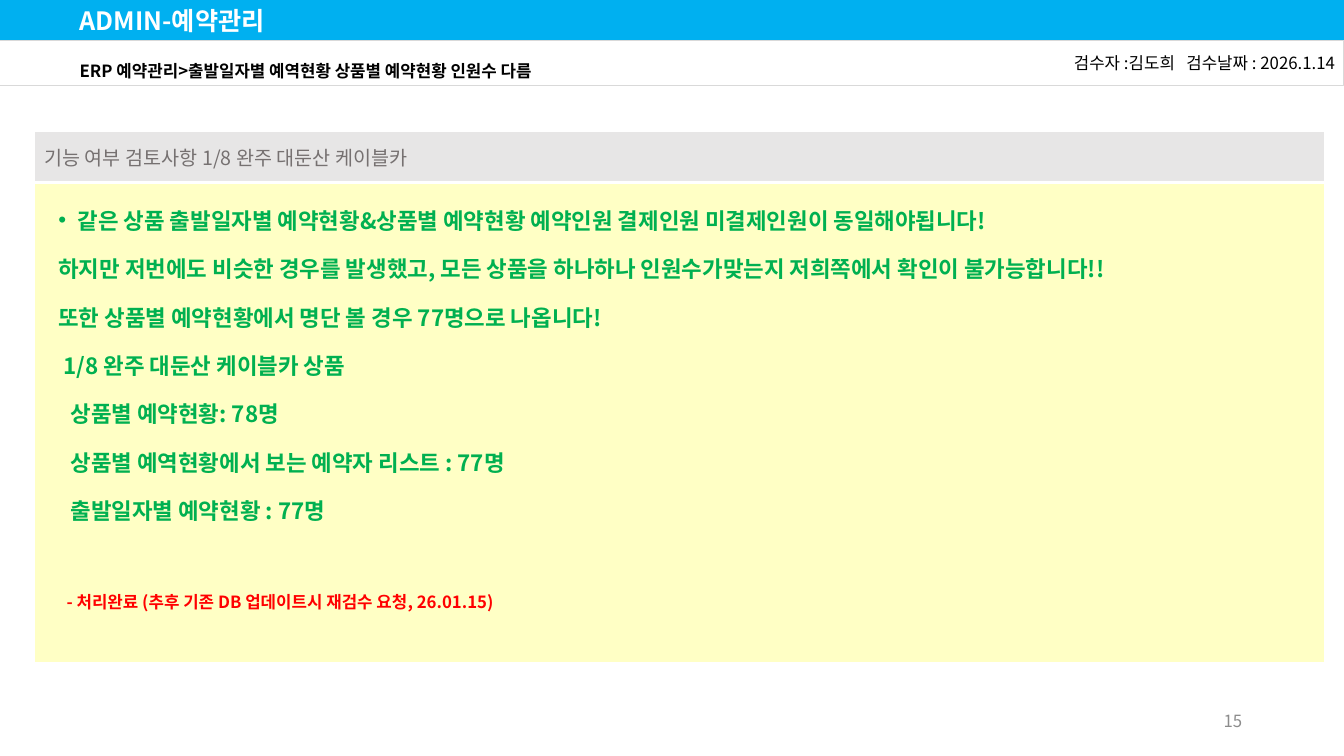
from lxml import etree
from pptx import Presentation
from pptx.dml.color import RGBColor
from pptx.enum.shapes import MSO_SHAPE
from pptx.enum.text import MSO_ANCHOR, MSO_AUTO_SIZE, PP_ALIGN
from pptx.oxml.ns import qn
from pptx.util import Inches, Pt

RECTANGLE = MSO_SHAPE.RECTANGLE
TOP, MIDDLE = MSO_ANCHOR.TOP, MSO_ANCHOR.MIDDLE
LEFT, RIGHT = PP_ALIGN.LEFT, PP_ALIGN.RIGHT
NO_AUTOFIT = MSO_AUTO_SIZE.NONE
TITLE_ONLY = 5
FONT = "Noto Sans CJK KR"
COLORS = {
    "bar": "00B0F0", "white": "FFFFFF", "black": "000000", "outline": "D9D9D9",
    "number": "8C8C8C", "heading": "767171", "heading_fill": "E7E6E6",
    "review": "00B050", "review_fill": "FFFFC5", "done": "FF0000",
}
REVIEW_LINES = [
    ("같은 상품 출발일자별 예약현황&상품별 예약현황 예약인원 결제인원 미결제인원이 동일해야됩니다!", 0),
    ("하지만 저번에도 비슷한 경우를 발생했고, 모든 상품을 하나하나 인원수가맞는지 저희쪽에서 확인이 불가능합니다!!", 0),
    ("또한 상품별 예약현황에서 명단 볼 경우 77명으로 나옵니다!", 0),
    ("1/8 완주 대둔산 케이블카 상품", 0.05),
    ("상품별 예약현황: 78명", 0.12),
    ("상품별 예역현황에서 보는 예약자 리스트 : 77명", 0.12),
    ("출발일자별 예약현황 : 77명", 0.12),
]
DONE_NOTE = "- 처리완료 (추후 기존 DB 업데이트시 재검수 요청, 26.01.15)"


def color(name):
    """Return the named palette colour."""
    return RGBColor.from_string(COLORS[name])


def add_run(paragraph, text, size, ink, bold=False):
    """Add one formatted run to a paragraph and return it."""
    run = paragraph.add_run()
    run.text = text
    run.font.size = Pt(size)
    run.font.bold = bold
    run.font.name = FONT
    run.font.color.rgb = color(ink)
    etree.SubElement(run.font._element, qn("a:ea"), typeface=FONT)
    return run


def set_frame(frame, left=0.1, top=0.05, anchor=MIDDLE):
    """Set wrapping, insets and anchor of a text frame."""
    frame.word_wrap = True
    frame.auto_size = NO_AUTOFIT
    frame.margin_left, frame.margin_top = Inches(left), Inches(top)
    frame.margin_right, frame.margin_bottom = Inches(0.1), Inches(0.05)
    frame.vertical_anchor = anchor


def place(shape, box):
    """Move and size a shape to a box in inches."""
    shape.left, shape.top, shape.width, shape.height = map(Inches, box)


def add_title(slide, box):
    """Turn the title placeholder into the blue bar."""
    title = slide.shapes.title
    place(title, box)
    title.fill.solid()
    title.fill.fore_color.rgb = color("bar")
    set_frame(title.text_frame, left=0.79)
    heading = title.text_frame.paragraphs[0]
    heading.alignment = LEFT
    add_run(heading, "ADMIN-예약관리", 18, "white", True)


def add_menu_path(slide, box):
    """Add the outlined strip with the menu path and issue."""
    strip = slide.shapes.add_shape(RECTANGLE, *map(Inches, box))
    strip.shadow.inherit = False
    strip.fill.background()
    strip.line.color.rgb = color("outline")
    strip.line.width = Pt(0.75)
    set_frame(strip.text_frame, left=0.79, top=0.2)
    issue = strip.text_frame.paragraphs[0]
    issue.alignment = LEFT
    add_run(issue, "ERP 예약관리>출발일자별 예역현황 상품별 예약현황 인원수 다름", 12, "black", True)


def add_right_text(slide, box, anchor):
    """Add a right-aligned text box and return its paragraph."""
    frame = slide.shapes.add_textbox(*map(Inches, box)).text_frame
    set_frame(frame, anchor=anchor)
    paragraph = frame.paragraphs[0]
    paragraph.alignment = RIGHT
    return paragraph


def add_inspection(slide, box):
    """Add the inspector and the inspection date."""
    inspection = add_right_text(slide, box, TOP)
    add_run(inspection, "검수자 :김도희", 12, "black")
    gap = add_run(inspection, " ", 12, "black")
    gap.font._element.set("spc", "540")
    add_run(inspection, "검수날짜 : 2026.1.14", 12, "black")


def add_page_number(slide, box):
    """Add the page number."""
    add_run(add_right_text(slide, box, MIDDLE), "15", 12, "number")


def style_cell(cell, fill, left, top, bottom_width=1):
    """Set fill, margins and white borders of a table cell."""
    cell.fill.solid()
    cell.fill.fore_color.rgb = color(fill)
    cell.margin_left, cell.margin_top = Inches(left), Inches(top)
    properties = cell._tc.get_or_add_tcPr()
    for index, side in enumerate("LRTB"):
        width = bottom_width if side == "B" else 1
        border = etree.Element(qn(f"a:ln{side}"), w=str(Pt(width)))
        paint = etree.SubElement(border, qn("a:solidFill"))
        etree.SubElement(paint, qn("a:srgbClr"), val=COLORS["white"])
        properties.insert(index, border)


def indent(paragraph, margin, hanging=0):
    """Set the left margin and hanging indent of a paragraph."""
    properties = paragraph._p.get_or_add_pPr()
    properties.set("marL", str(Inches(margin)))
    properties.set("indent", str(-Inches(hanging)))
    return properties


def fill_review(frame):
    """Write the review lines and the completion note."""
    for number, (text, margin) in enumerate(REVIEW_LINES):
        line = frame.add_paragraph() if number else frame.paragraphs[0]
        line.line_spacing = 1.5
        if number:
            indent(line, margin)
        else:
            properties = indent(line, 0.19, 0.19)
            etree.SubElement(properties, qn("a:buFont"), typeface="Arial")
            etree.SubElement(properties, qn("a:buChar"), char="•")
        add_run(line, text, 16, "review", True)
    note = frame.add_paragraph()
    note.line_spacing = 1.5
    note.space_before = Pt(36)
    indent(note, 0.08)
    add_run(note, DONE_NOTE, 12, "done", True)


def add_review_table(slide, box, heading_height):
    """Add the review table with its heading and remarks."""
    table = slide.shapes.add_table(2, 1, *map(Inches, box)).table
    table.first_row = table.horz_banding = False
    table.rows[0].height = Inches(heading_height)
    table.rows[1].height = Inches(box[3] - heading_height)
    heading, review = table.cell(0, 0), table.cell(1, 0)
    style_cell(heading, "heading_fill", 0.1, 0.12, 3)
    style_cell(review, "review_fill", 0.24, 0.05)
    add_run(heading.text_frame.paragraphs[0],
            "기능 여부 검토사항 1/8 완주 대둔산 케이블카", 14, "heading")
    fill_review(review.text_frame)


def main():
    """Build the reservation review slide."""
    deck = Presentation()
    deck.slide_width, deck.slide_height = Inches(13.33), Inches(7.5)
    slide = deck.slides.add_slide(deck.slide_layouts[TITLE_ONLY])
    add_title(slide, (0, 0, 13.33, 0.4))
    add_page_number(slide, (9.42, 6.95, 3, 0.4))
    add_review_table(slide, (0.34, 1.3, 12.8, 5.27), 0.51)
    add_menu_path(slide, (0, 0.4, 13.33, 0.45))
    add_inspection(slide, (10.07, 0.47, 3.27, 0.3))
    deck.save("out.pptx")


if __name__ == "__main__":
    main()
